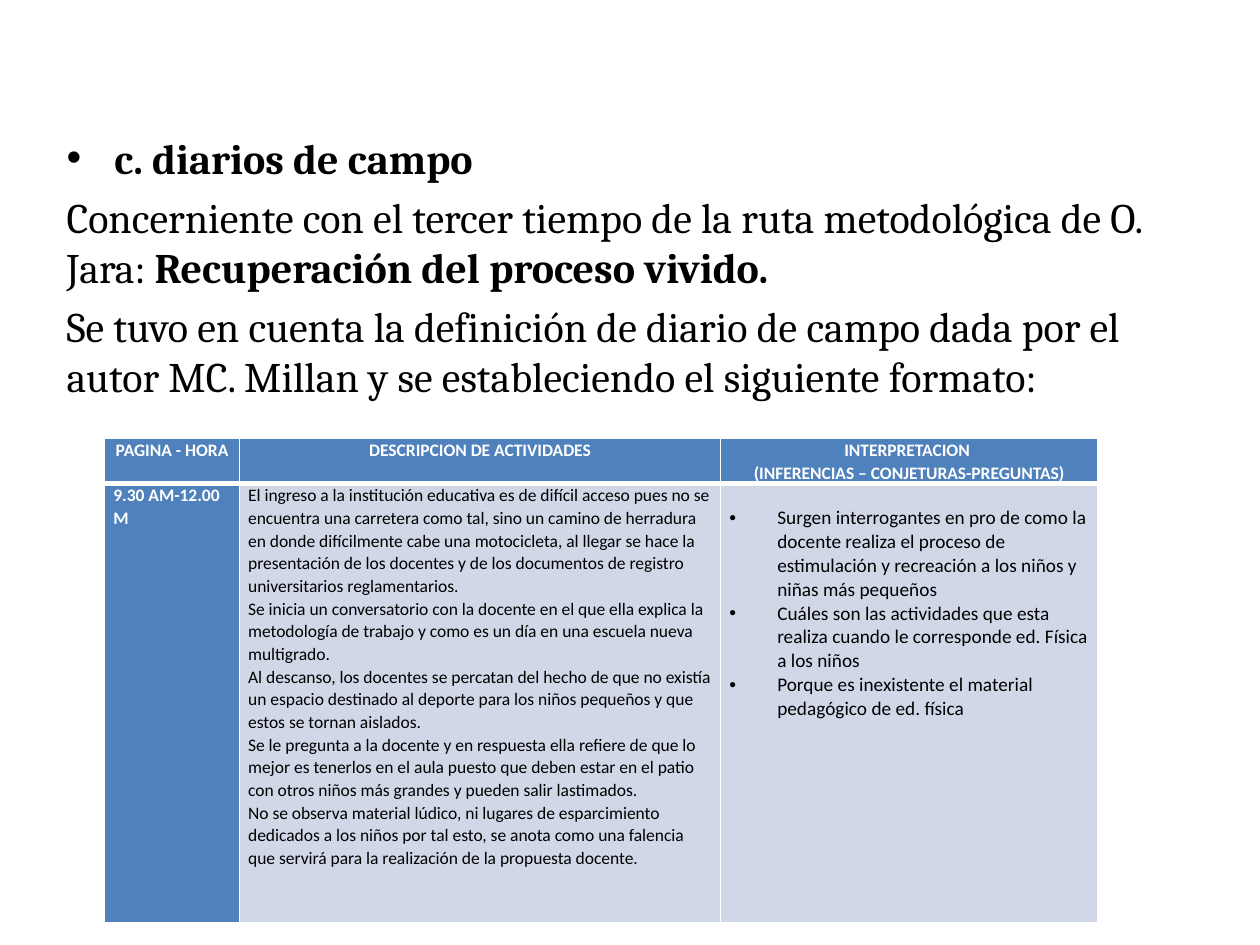
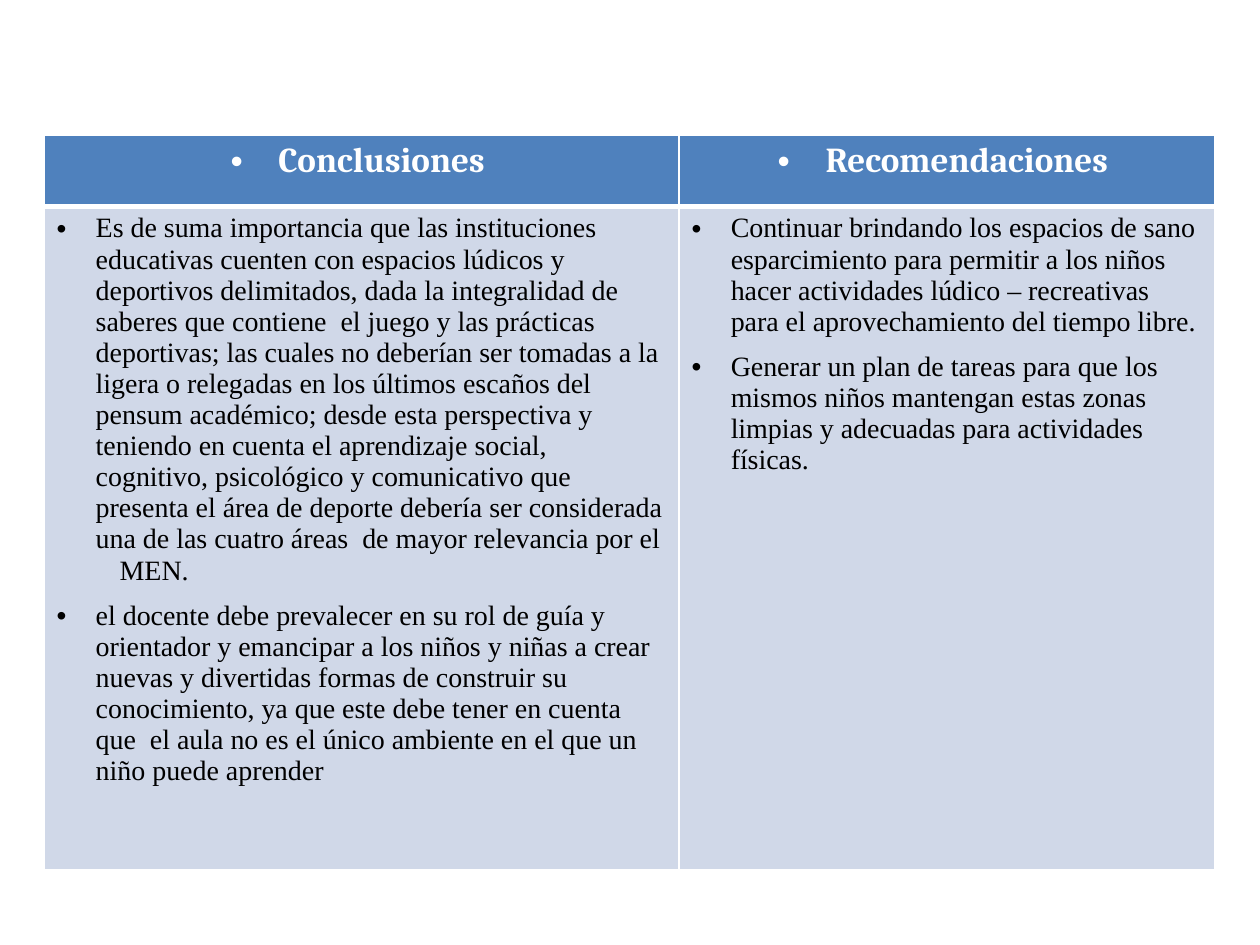
from lxml.etree import SubElement
from pptx import Presentation
from pptx.dml.color import RGBColor
from pptx.enum.text import PP_ALIGN as Align
from pptx.oxml.ns import qn
from pptx.util import Inches, Pt

HUES = {"head": "4F81BD", "body": "D0D8E8", "light": "FFFFFF", "dark": "000000"}

INTRO = [
    [("c. diarios de campo", True)],
    [("Concerniente con el tercer tiempo de la ruta metodológica de O. Jara: ", False),
     ("Recuperación del proceso vivido.", True)],
    [("Se tuvo en cuenta la definición de diario de campo dada por el autor MC. Millan "
      "y se estableciendo el siguiente formato:", False)],
]

DIARY = [
    [["PAGINA - HORA"], ["DESCRIPCION DE ACTIVIDADES"],
     ["INTERPRETACION ", "(INFERENCIAS – CONJETURAS-PREGUNTAS)"]],
    [["9.30 AM-12.00 M"],
     ["El ingreso a la institución educativa es de difícil acceso pues no se encuentra una "
      "carretera como tal, sino un camino de herradura en donde difícilmente cabe una "
      "motocicleta, al llegar se hace la presentación de los docentes y de los documentos "
      "de registro universitarios reglamentarios.",
      "Se inicia un conversatorio con la docente en el que ella explica la metodología de "
      "trabajo y como es un día en una escuela nueva multigrado.",
      "Al descanso, los docentes se percatan del hecho de que no existía un espacio destinado "
      "al deporte para los niños pequeños y que estos se tornan aislados.",
      "Se le pregunta a la docente y en respuesta ella refiere de que lo mejor es tenerlos en "
      "el aula puesto que deben estar en el patio con otros niños más grandes y pueden salir "
      "lastimados.",
      "No se observa material lúdico, ni lugares de esparcimiento dedicados a los niños por "
      "tal esto, se anota como una falencia que servirá para la realización de la propuesta "
      "docente."],
     ["Surgen interrogantes en pro de como la docente realiza el proceso de estimulación y "
      "recreación a los niños y niñas más pequeños",
      "Cuáles son las actividades que esta realiza cuando le corresponde ed. Física a los niños",
      "Porque es inexistente el material pedagógico de ed. física"]],
]

CLOSING = [
    [["Conclusiones "], ["Recomendaciones "]],
    [["Es de suma importancia que las instituciones educativas cuenten con espacios lúdicos y "
      "deportivos delimitados, dada la integralidad de saberes que contiene  el juego y las "
      "prácticas deportivas; las cuales no deberían ser tomadas a la ligera o relegadas en los "
      "últimos escaños del pensum académico; desde esta perspectiva y teniendo en cuenta el "
      "aprendizaje social, cognitivo, psicológico y comunicativo que presenta el área de "
      "deporte debería ser considerada una de las cuatro áreas  de mayor relevancia por el \tMEN.",
      "el docente debe prevalecer en su rol de guía y orientador y emancipar a los niños y "
      "niñas a crear nuevas y divertidas formas de construir su conocimiento, ya que este debe "
      "tener en cuenta que  el aula no es el único ambiente en el que un niño puede aprender"],
     ["Continuar brindando los espacios de sano esparcimiento para permitir a los niños hacer "
      "actividades lúdico – recreativas para el aprovechamiento del tiempo libre.",
      "Generar un plan de tareas para que los mismos niños mantengan estas zonas limpias y "
      "adecuadas para actividades físicas."]],
]

# Text styles
HEAD = {"hue": "light", "bold": True, "align": Align.CENTER}
NOTE = {"font": "Calibri", "size": 10, "line": 1.07}
LEAD = {"font": "Cambria", "size": 24}
ITEM = {"font": "Times New Roman", "size": 16, "dent": 0.31, "after": 8, "right": 0.12}
ASK = {"font": "Calibri", "size": 11, "dent": 0.38}

# Cell styles, laid out like the rows of each table
DIARY_LOOK = [[NOTE | HEAD] * 3,
              [NOTE | {"hue": "light", "bold": True, "fill": "head"}, NOTE, ASK | {"top": 0.18}]]
CLOSING_LOOK = [[HEAD | {"font": "Cambria", "size": 20, "dent": 0.38}] * 2, [ITEM] * 2]


def add_dot(para, dent):
    """Give the paragraph a round bullet with a hanging indent."""
    props = para._p.get_or_add_pPr()
    props.set("marL", str(Inches(dent)))
    props.set("indent", str(-Inches(dent)))
    SubElement(props, qn("a:buFont"), typeface="Arial")
    SubElement(props, qn("a:buChar"), char="•")


def style(para, look):
    if "dent" in look:
        add_dot(para, look["dent"])
    para.alignment = look.get("align", Align.LEFT)
    if "line" in look:
        para.line_spacing = look["line"]
    if "after" in look:
        para.space_after = Pt(look["after"])
    for run in para.runs:
        font = run.font
        font.name, font.size = look["font"], Pt(look["size"])
        font.bold = look.get("bold", False)
        font.color.rgb = RGBColor.from_string(HUES[look.get("hue", "dark")])


def next_para(frame, num):
    return frame.add_paragraph() if num else frame.paragraphs[0]


def add_edge(cell, side, width):
    line = SubElement(cell._tc.get_or_add_tcPr(), qn(f"a:ln{side}"), w=str(Pt(width)))
    fill = SubElement(line, qn("a:solidFill"))
    SubElement(fill, qn("a:srgbClr"), val=HUES["light"])


def add_grid(slide, rows, looks, spot, wides, highs, pad=(0.1, 0.05)):
    """Add a table; pad is the (side, top and bottom) inset of its cells."""
    size = Inches(sum(wides)), Inches(sum(highs))
    grid = slide.shapes.add_table(len(rows), len(wides), *map(Inches, spot), *size).table
    for col, wide in zip(grid.columns, wides):
        col.width = Inches(wide)
    for r, (row, high) in enumerate(zip(rows, highs)):
        grid.rows[r].height = Inches(high)
        for c, texts in enumerate(row):
            cell, look = grid.cell(r, c), looks[r][c]
            cell.margin_left = Inches(pad[0])
            cell.margin_right = Inches(look.get("right", pad[0]))
            cell.margin_top = Inches(look.get("top", pad[1]))
            cell.margin_bottom = Inches(pad[1])
            for side in "LRTB":
                joint = side == ("T" if r else "B")
                add_edge(cell, side, 3 if joint else 1)
            cell.fill.solid()
            hue = look.get("fill", "body" if r else "head")
            cell.fill.fore_color.rgb = RGBColor.from_string(HUES[hue])
            for num, text in enumerate(texts):
                para = next_para(cell.text_frame, num)
                para.text = text
                style(para, look)


def add_intro(slide):
    box = slide.shapes.add_textbox(Inches(0.43), Inches(1), Inches(9.3), Inches(4.95))
    frame = box.text_frame
    frame.word_wrap = True
    for num, parts in enumerate(INTRO):
        para = next_para(frame, num)
        for text, _ in parts:
            para.add_run().text = text
        style(para, LEAD if num else LEAD | {"dent": 0.38})
        if num:
            para.space_before = Pt(4.8)
        for run, (_, bold) in zip(para.runs, parts):
            run.font.bold = bold


def main():
    deck = Presentation()
    deck.slide_width, deck.slide_height = Inches(10), Inches(7.5)
    blank = deck.slide_layouts[6]

    diary = deck.slides.add_slide(blank)
    add_intro(diary)
    add_grid(diary, DIARY, DIARY_LOOK, (0.83, 3.48), (1.07, 3.82, 2.99), (0.36, 3.48), (0.07, 0))

    closing = deck.slides.add_slide(blank)
    add_grid(closing, CLOSING, CLOSING_LOOK, (0.35, 1.07), (5.04, 4.25), (0.57, 5.26))

    deck.save("out.pptx")


if __name__ == "__main__":
    main()
